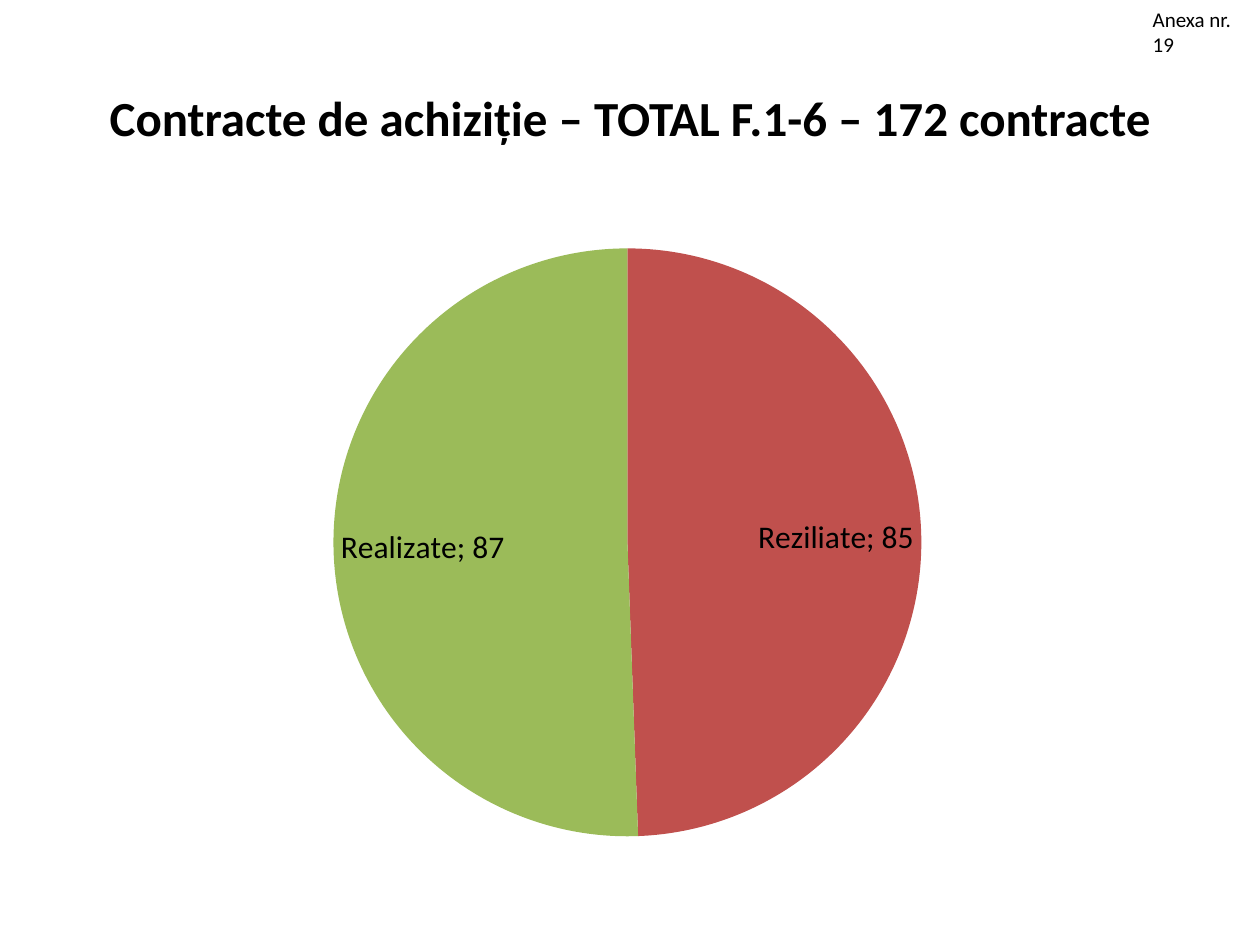
from typing import NamedTuple

from lxml.etree import SubElement
from pptx import Presentation
from pptx.chart.data import CategoryChartData
from pptx.dml.color import RGBColor
from pptx.enum.chart import XL_CHART_TYPE as ChartType, XL_LABEL_POSITION as LabelPosition
from pptx.enum.text import MSO_ANCHOR as Anchor, PP_ALIGN as Align
from pptx.oxml.ns import qn
from pptx.util import Pt

BLACK = RGBColor(0x00, 0x00, 0x00)
RED = RGBColor(0xC0, 0x50, 0x4D)
GREEN = RGBColor(0x9B, 0xBB, 0x59)
FONT = "Calibri"


class Outcome(NamedTuple):
    label: str
    contracts: int
    color: RGBColor


class Box(NamedTuple):
    left: float
    top: float
    width: float
    height: float

    def lengths(self) -> list[Pt]:
        return [Pt(value) for value in self]


OUTCOMES = [Outcome("Reziliate", 85, RED), Outcome("Realizate", 87, GREEN)]
TITLE_BOX = Box(36, 21.6, 648, 90)
CHART_BOX = Box(34.56, 131.76, 648, 356.4)
ANNEX_BOX = Box(651.6, 0, 68.4, 21.6)
PIE_DIAMETER = 336


def style_font(font, size: float, bold: bool = False) -> None:
    font.name = FONT
    font.size = Pt(size)
    font.bold = bold
    font.color.rgb = BLACK


def write(frame, text: str, size: float, align: Align, bold: bool = False) -> None:
    frame.word_wrap = True
    paragraph = frame.paragraphs[0]
    paragraph.alignment = align
    run = paragraph.add_run()
    run.text = text
    style_font(run.font, size, bold)


def center_pie(chart, box: Box, diameter: float) -> None:
    plot_area = chart.plots[0]._element.getparent()
    layout = plot_area.find(qn("c:layout"))
    if layout is None:
        layout = SubElement(plot_area, qn("c:layout"))
        plot_area.insert(0, layout)
    manual = SubElement(layout, qn("c:manualLayout"))
    width, height = diameter / box.width, diameter / box.height
    settings = {
        "layoutTarget": "inner", "xMode": "edge", "yMode": "edge",
        "x": (1 - width) / 2, "y": (1 - height) / 2, "w": width, "h": height,
    }
    for tag, value in settings.items():
        SubElement(manual, qn(f"c:{tag}")).set("val", str(value))


def add_outcome_pie(slide, outcomes: list[Outcome], box: Box) -> None:
    data = CategoryChartData()
    data.categories = [outcome.label for outcome in outcomes]
    data.add_series("Series 1", [outcome.contracts for outcome in outcomes])
    chart = slide.shapes.add_chart(ChartType.PIE, *box.lengths(), data).chart
    chart.has_title = False
    chart.has_legend = False
    style_font(chart.font, 18)
    plot = chart.plots[0]
    plot.vary_by_categories = True
    for index, outcome in enumerate(outcomes):
        point_format = plot.series[0].points[index].format
        point_format.fill.solid()
        point_format.fill.fore_color.rgb = outcome.color
        point_format.line.fill.background()
    plot.has_data_labels = True
    labels = plot.data_labels
    labels.show_value = True
    labels.show_category_name = True
    labels.show_percentage = False
    labels.position = LabelPosition.INSIDE_END
    style_font(labels.font, 18)
    separator = labels._element.makeelement(qn("c:separator"))
    separator.text = "; "
    labels._element.find(qn("c:showBubbleSize")).addnext(separator)
    center_pie(chart, box, PIE_DIAMETER)


def main() -> None:
    presentation = Presentation()
    presentation.slide_width, presentation.slide_height = Pt(720), Pt(540)
    slide = presentation.slides.add_slide(presentation.slide_layouts[5])

    title = slide.shapes.title
    title.left, title.top, title.width, title.height = TITLE_BOX.lengths()
    title.text_frame.vertical_anchor = Anchor.MIDDLE
    write(title.text_frame, "Contracte de achiziție – TOTAL F.1-6 – 172 contracte",
          28, Align.CENTER, bold=True)

    add_outcome_pie(slide, OUTCOMES, CHART_BOX)

    annex = slide.shapes.add_textbox(*ANNEX_BOX.lengths())
    write(annex.text_frame, "Anexa nr. 19", 12, Align.LEFT)

    presentation.save("out.pptx")


if __name__ == "__main__":
    main()
